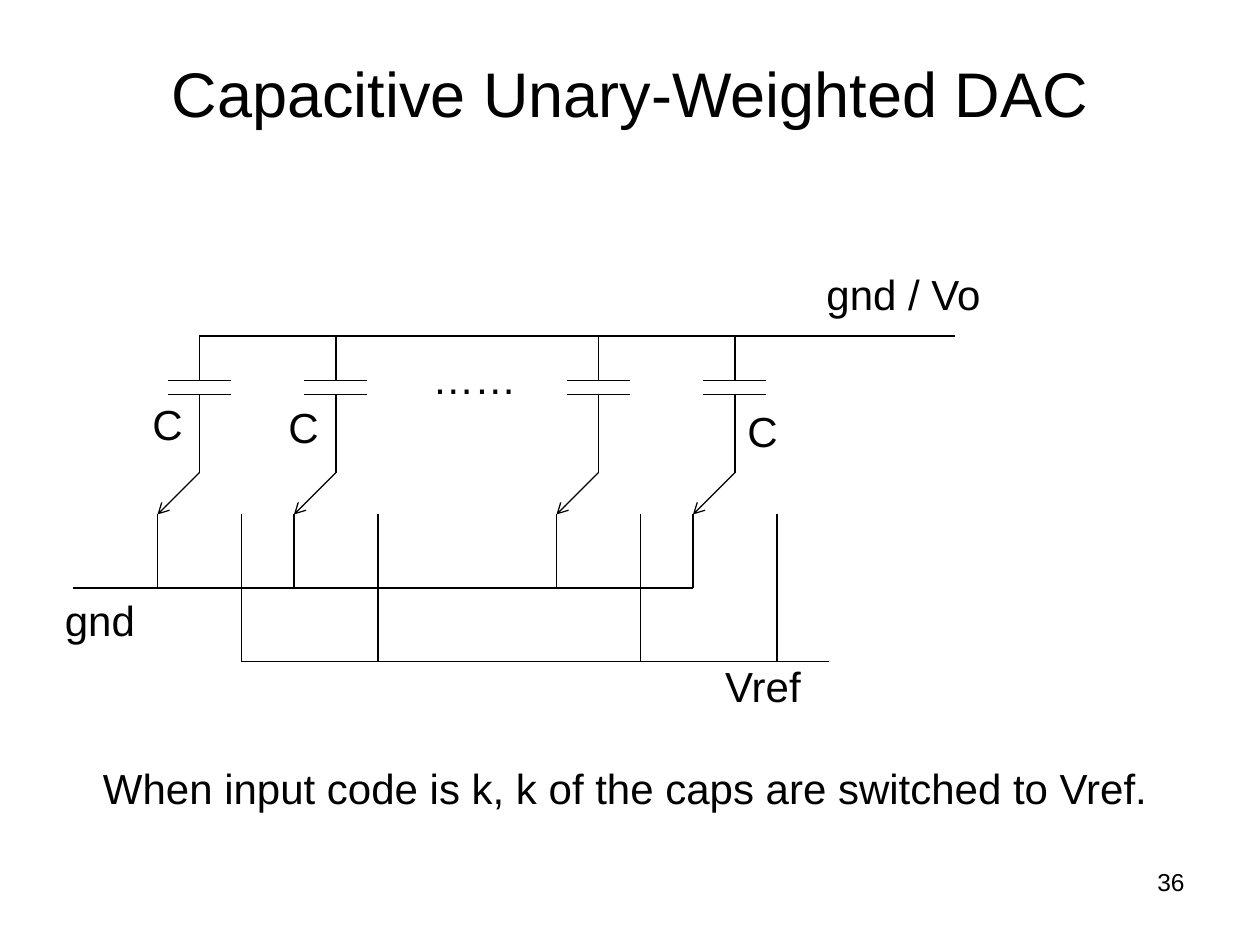
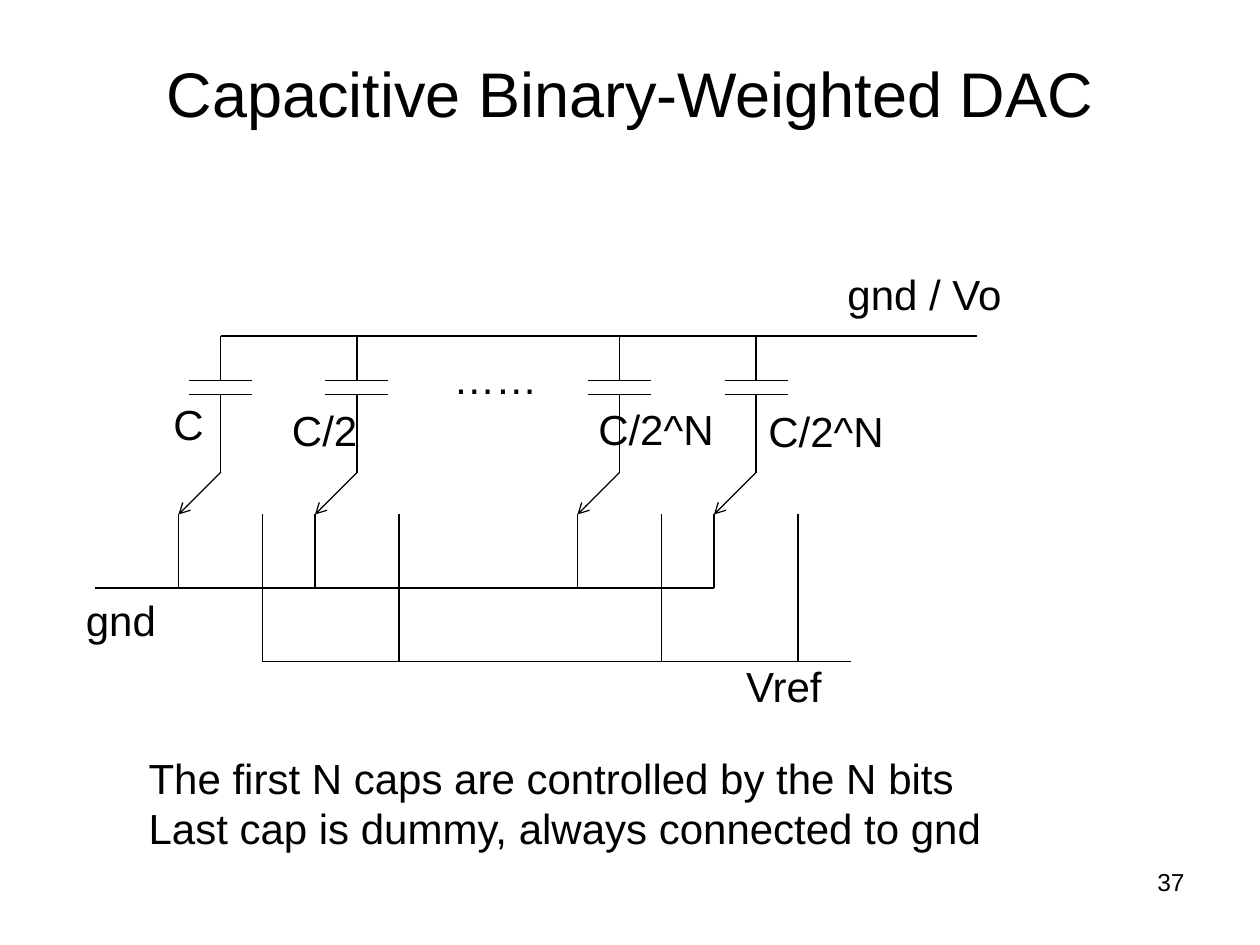
from lxml import etree
from pptx import Presentation
from pptx.dml.color import RGBColor
from pptx.enum.shapes import MSO_CONNECTOR
from pptx.enum.text import MSO_ANCHOR, MSO_AUTO_SIZE, PP_ALIGN
from pptx.oxml.ns import qn
from pptx.util import Pt

# Heights of the circuit's levels, in points
TOP_RAIL, UPPER_PLATE, LOWER_PLATE, CAP_END = 192, 217.4, 225.4, 252
SWITCH_START, PIVOT, CONTACT, GND_RAIL, VREF_RAIL = 246, 270, 294, 336, 378
# Distances from the first branch
BRANCHES = (0, 78, 228, 306)
PLATE_HALF = 18
THROW = 24


def color(hex_value):
    return RGBColor.from_string(hex_value)


class Deck:
    font = "Arial"
    ink = "000000"
    line_width = 0.75
    label_height = 36.4

    def __init__(self):
        self.presentation = Presentation()
        self.presentation.slide_width = Pt(720)
        self.presentation.slide_height = Pt(540)
        self.slide = None

    def add_lines(self, frame, lines, size, align=PP_ALIGN.LEFT):
        for index, line in enumerate(lines):
            paragraph = frame.paragraphs[0] if index == 0 else frame.add_paragraph()
            paragraph.alignment = align
            run = paragraph.add_run()
            run.text = line
            run.font.name = self.font
            run.font.size = Pt(size)
            run.font.color.rgb = color(self.ink)

    def start_slide(self, heading, number):
        self.slide = self.presentation.slides.add_slide(self.presentation.slide_layouts[5])
        title = self.slide.shapes.title
        title.left, title.top, title.width, title.height = Pt(36), Pt(21.6), Pt(648), Pt(62.6)
        frame = title.text_frame
        frame.auto_size = MSO_AUTO_SIZE.NONE
        frame.vertical_anchor = MSO_ANCHOR.MIDDLE
        self.add_lines(frame, [heading], 36, PP_ALIGN.CENTER)
        self.text([str(number)], 516, 492, 168, 37.4, 14, PP_ALIGN.RIGHT, wrap=True)

    def text(self, lines, left, top, width, height=label_height, size=24,
             align=PP_ALIGN.LEFT, wrap=False):
        box = self.slide.shapes.add_textbox(Pt(left), Pt(top), Pt(width), Pt(height))
        frame = box.text_frame
        frame.word_wrap = wrap
        frame.auto_size = MSO_AUTO_SIZE.NONE if wrap else MSO_AUTO_SIZE.SHAPE_TO_FIT_TEXT
        self.add_lines(frame, lines, size, align)

    def line(self, x1, y1, x2, y2, group=None, arrow=False):
        shapes = (group or self.slide).shapes
        wire = shapes.add_connector(MSO_CONNECTOR.STRAIGHT, Pt(x1), Pt(y1), Pt(x2), Pt(y2))
        wire.line.width = Pt(self.line_width)
        wire.line.color.rgb = color(self.ink)
        properties = wire.element.spPr
        if arrow:
            etree.SubElement(properties.find(qn("a:ln")), qn("a:tailEnd"), type="arrow")
        etree.SubElement(properties, qn("a:effectLst"))

    def capacitor(self, x):
        group = self.slide.shapes.add_group_shape()
        for plate in (UPPER_PLATE, LOWER_PLATE):
            self.line(x - PLATE_HALF, plate, x + PLATE_HALF, plate, group)
        self.line(x, TOP_RAIL, x, UPPER_PLATE, group)
        self.line(x, LOWER_PLATE + 0.6, x, CAP_END, group)

    def switch(self, x):
        """Draw a two-way switch thrown to the gnd contact."""
        group = self.slide.shapes.add_group_shape()
        self.line(x, SWITCH_START, x, PIVOT, group)
        self.line(x, PIVOT, x - THROW, CONTACT, group, arrow=True)
        self.line(x - THROW, CONTACT, x - THROW, GND_RAIL, group)
        self.line(x + THROW, CONTACT, x + THROW, VREF_RAIL, group)

    def dac(self, origin, cap_labels):
        """Draw the capacitor array with its first branch at x = origin."""
        for branch in BRANCHES:
            self.capacitor(origin + branch)
        self.line(origin, TOP_RAIL, origin + 432, TOP_RAIL)
        for branch in BRANCHES:
            self.switch(origin + branch)
        self.line(origin + BRANCHES[-1] - THROW, GND_RAIL, origin - 72, GND_RAIL)
        self.line(origin + THROW, VREF_RAIL, origin + 360, VREF_RAIL)
        rail_labels = (
            ("……", 126, 198, 63.4),
            ("gnd", -84, 336, 54.7),
            ("Vref", 293.3, 373.7, 58.3),
            ("gnd / Vo", 351.2, 149.8, 103.7),
        )
        for label, offset, top, width in rail_labels + cap_labels:
            self.text([label], origin + offset, top, width)


def main():
    deck = Deck()

    deck.start_slide("Capacitive Unary-Weighted DAC", 36)
    deck.dac(114, (
        ("C", -34, 223.9, 32),
        ("C", 43.7, 226.1, 32),
        ("C", 306, 228.2, 32),
    ))
    deck.text(["When input code is k, k of the caps are switched to Vref."], 51.8, 432, 617)

    deck.start_slide("Capacitive Binary-Weighted DAC", 37)
    deck.dac(126, (
        ("C", -34, 223.9, 32),
        ("C/2", 33.8, 227.5, 52.6),
        ("C/2^N", 208.8, 226.8, 81.4),
        ("C/2^N", 306, 228.2, 81.4),
    ))
    deck.text(["The first N caps are controlled by the N bits",
               "Last cap is dummy, always connected to gnd"], 77.8, 426.2, 495.4, 65.5)

    deck.presentation.save("out.pptx")


if __name__ == "__main__":
    main()
